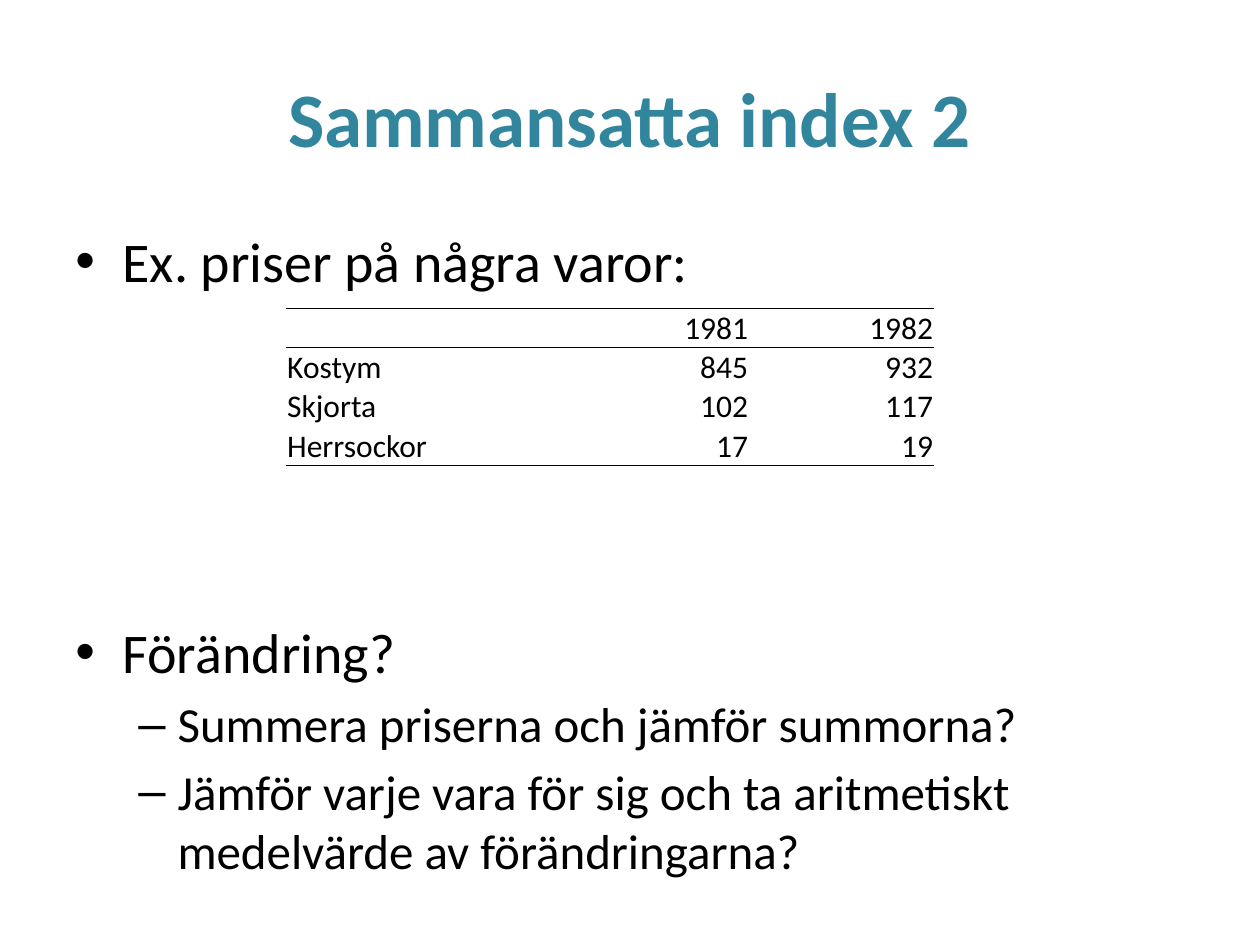
from dataclasses import dataclass

from lxml import etree
from pptx import Presentation
from pptx import util as u
from pptx.dml.color import RGBColor
from pptx.enum import text
from pptx.oxml import ns


@dataclass(frozen=True)
class Theme:
    """Colours, font and type sizes of the slide."""
    font: str = "Calibri"
    accent: str = "31859C"
    ink: str = "000000"
    title: int = 44
    point: int = 32
    subpoint: int = 28
    price: int = 18
    rule: int = 1


THEME = Theme()
PRICES = [
    ("", "1981", "1982"),
    ("Kostym", "845", "932"),
    ("Skjorta", "102", "117"),
    ("Herrsockor", "17", "19"),
]


def add_run(paragraph, words, size, color=THEME.ink, bold=False):
    """Append one styled run to a paragraph."""
    run = paragraph.add_run()
    run.text = words
    run.font.name = THEME.font
    run.font.size = u.Pt(size)
    run.font.bold = bold
    run.font.color.rgb = RGBColor.from_string(color)


def add_frame(slide, left, top, width, height, anchor):
    """Add a wrapping text box and return its text frame."""
    box = slide.shapes.add_textbox(u.Cm(left), u.Cm(top), u.Cm(width), u.Cm(height))
    frame = box.text_frame
    frame.word_wrap = True
    frame.vertical_anchor = anchor
    return frame


def add_title(slide, words):
    """Add the centred slide heading."""
    frame = add_frame(slide, 1.27, 0.76, 22.86, 3.18, text.MSO_ANCHOR.MIDDLE)
    heading = frame.paragraphs[0]
    heading.alignment = text.PP_ALIGN.CENTER
    add_run(heading, words, THEME.title, THEME.accent, True)


def add_bullet(paragraph, words, level, space_before):
    """Fill a paragraph as a bulleted point of the given level."""
    mark, margin, hang, size = [
        ("•", 0.95, 0.95, THEME.point),
        ("–", 2.06, 0.79, THEME.subpoint),
    ][level]
    paragraph.level = level
    paragraph.space_before = u.Pt(space_before)
    add_run(paragraph, words, size)
    properties = paragraph._p.get_or_add_pPr()
    properties.set("marL", str(u.Cm(margin)))
    properties.set("indent", str(-u.Cm(hang)))
    etree.SubElement(properties, ns.qn("a:buFont"), typeface="Arial")
    etree.SubElement(properties, ns.qn("a:buChar"), char=mark)


def add_points(slide, points):
    """Add the body list from (words, level, space before) entries."""
    frame = add_frame(slide, 1.27, 4.45, 22.86, 13.64, text.MSO_ANCHOR.TOP)
    for index, point in enumerate(points):
        paragraph = frame.add_paragraph() if index else frame.paragraphs[0]
        add_bullet(paragraph, *point)


def set_borders(cell, ruled):
    """Draw the ruled sides of a cell and clear the others."""
    properties = cell._tc.get_or_add_tcPr()
    for index, side in enumerate("LRTB"):
        line = etree.Element(ns.qn(f"a:ln{side}"), w=str(u.Pt(THEME.rule)))
        if side in ruled:
            fill = etree.SubElement(line, ns.qn("a:solidFill"))
            etree.SubElement(fill, ns.qn("a:srgbClr"), val=THEME.ink)
        else:
            etree.SubElement(line, ns.qn("a:noFill"))
        properties.insert(index, line)


def fill_cell(cell, words, alignment, ruled):
    """Set the text, margins, fill and borders of one price cell."""
    cell.margin_left = cell.margin_right = cell.margin_top = u.Cm(0.02)
    cell.margin_bottom = 0
    cell.vertical_anchor = text.MSO_ANCHOR.BOTTOM
    cell.fill.background()
    entry = cell.text_frame.paragraphs[0]
    entry.alignment = alignment
    if words:
        add_run(entry, words, THEME.price)
    set_borders(cell, ruled)


def add_prices(slide, prices):
    """Add the price table with rules around the header and at the foot."""
    widths = (5.72, 3.61, 3.73)
    row_height = 0.79
    table = slide.shapes.add_table(
        len(prices), len(widths), u.Cm(5.77), u.Cm(6.22),
        u.Cm(sum(widths)), u.Cm(row_height * len(prices))).table
    table.first_row = table.horz_banding = False
    for column, width in zip(table.columns, widths):
        column.width = u.Cm(width)
    ruled_sides = {0: "TB", 1: "T", len(prices) - 1: "B"}
    for row, entries in enumerate(prices):
        table.rows[row].height = u.Cm(row_height)
        for column, words in enumerate(entries):
            alignment = text.PP_ALIGN.RIGHT if column else text.PP_ALIGN.LEFT
            fill_cell(table.cell(row, column), words, alignment,
                      ruled_sides.get(row, ""))


def main():
    """Build and save the slide."""
    deck = Presentation()
    deck.slide_width, deck.slide_height = u.Cm(25.4), u.Cm(19.05)
    slide = deck.slides.add_slide(deck.slide_layouts[6])
    add_title(slide, "Sammansatta index 2")
    add_points(slide, [
        ("Ex. priser på några varor:", 0, 0),
        ("Förändring?", 0, 185),
        ("Summera priserna och jämför summorna?", 1, 5),
        ("Jämför varje vara för sig och ta aritmetiskt "
         "medelvärde av förändringarna?", 1, 5),
    ])
    add_prices(slide, PRICES)
    deck.save("out.pptx")


if __name__ == "__main__":
    main()
